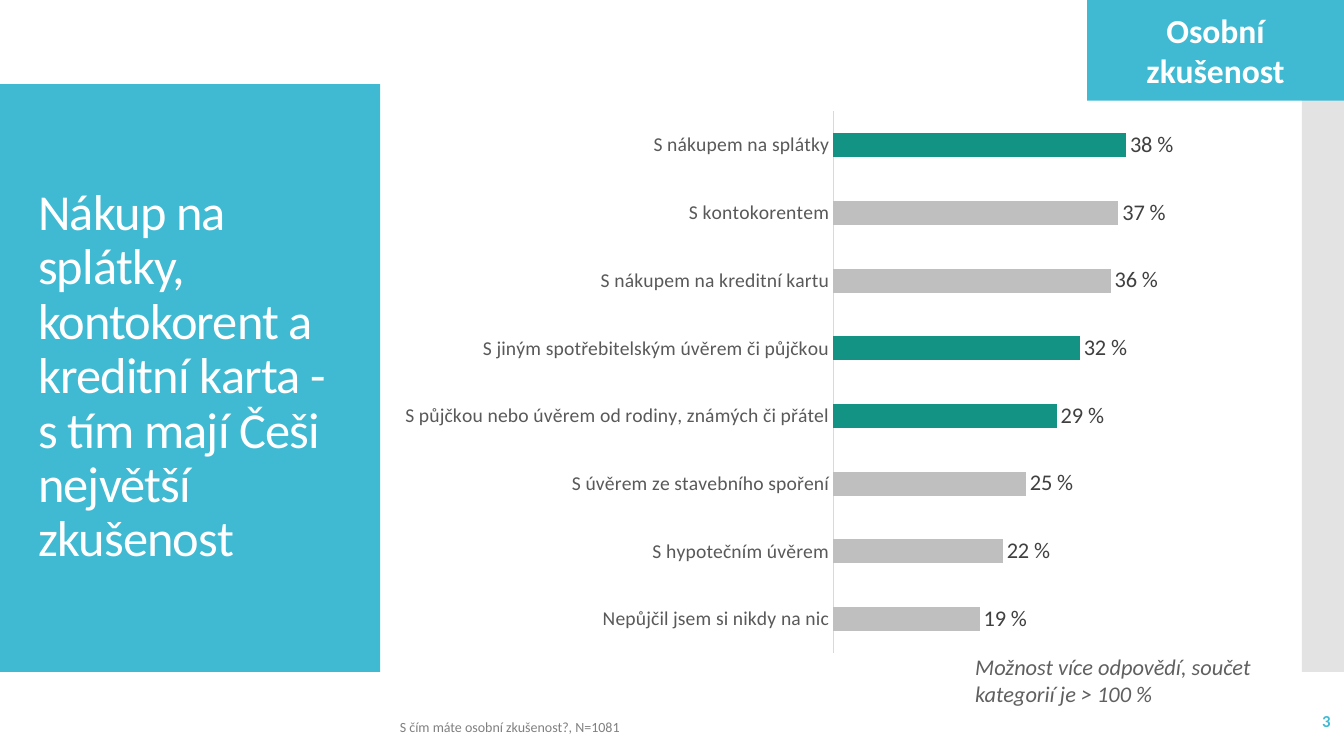
"""Build the slide on personal experience with loans as a bar chart."""
from dataclasses import dataclass

from lxml import etree
from pptx import Presentation
from pptx import util as u
from pptx.chart import data as chart_data
from pptx.dml import color
from pptx.enum import chart as chart_enum
from pptx.enum import shapes, text
from pptx.oxml import ns

FONT = "Calibri"
CYAN, TEAL, SILVER, WHITE = "40BAD2", "139383", "BFBFBF", "FFFFFF"


@dataclass(frozen=True)
class Frame:
    left: float
    top: float
    width: float
    height: float

    def lengths(self) -> list:
        return [u.Pt(v) for v in (self.left, self.top, self.width, self.height)]


@dataclass(frozen=True)
class Style:
    size: float
    hue: str
    bold: bool = False
    italic: bool = False
    align: text.PP_ALIGN = text.PP_ALIGN.LEFT
    anchor: text.MSO_ANCHOR = text.MSO_ANCHOR.TOP


@dataclass(frozen=True)
class Panel:
    frame: Frame
    fill: str
    opacity: int = 100


@dataclass(frozen=True)
class Label:
    frame: Frame
    words: str
    style: Style


@dataclass(frozen=True)
class Answer:
    name: str
    share: float
    hue: str = SILVER


PANELS = [
    Panel(Frame(0, 60, 271.5, 420), CYAN),
    Panel(Frame(930, 60, 30, 420), "C8C8C8", 50),
]
TITLE = Label(
    Frame(20, 88.5, 232, 362),
    "Nákup na splátky, kontokorent a kreditní karta - \vs tím mají Češi největší zkušenost",
    Style(36, WHITE, anchor=text.MSO_ANCHOR.MIDDLE),
)
LABELS = [
    Label(Frame(837.5, 500.5, 120, 29), "3",
          Style(12, CYAN, bold=True, align=text.PP_ALIGN.RIGHT, anchor=text.MSO_ANCHOR.MIDDLE)),
    Label(Frame(278.5, 510, 480, 19.5), "S čím máte osobní zkušenost?, N=1081", Style(10, "808080")),
    Label(Frame(689.5, 463, 242, 46), "Možnost více odpovědí, součet kategorií je > 100 %",
          Style(16, "606060", italic=True)),
]
TAG = Label(
    Frame(776.5, 0, 183.5, 72), "Osobní zkušenost",
    Style(24, WHITE, bold=True, align=text.PP_ALIGN.CENTER, anchor=text.MSO_ANCHOR.MIDDLE),
)
CHART_FRAME = Frame(278.5, 71.5, 576, 403)
ANSWERS = [
    Answer("Nepůjčil jsem si nikdy na nic", 0.19),
    Answer("S hypotečním úvěrem", 0.22),
    Answer("S úvěrem ze stavebního spoření", 0.25),
    Answer("S půjčkou nebo úvěrem od rodiny, známých či přátel", 0.29, TEAL),
    Answer("S jiným spotřebitelským úvěrem či půjčkou", 0.32, TEAL),
    Answer("S nákupem na kreditní kartu", 0.36),
    Answer("S kontokorentem", 0.37),
    Answer("S nákupem na splátky", 0.38, TEAL),
]


def rgb(value: str) -> color.RGBColor:
    return color.RGBColor.from_string(value)


def set_font(font, style: Style) -> None:
    font.name, font.size = FONT, u.Pt(style.size)
    font.bold, font.italic = style.bold, style.italic
    font.color.rgb = rgb(style.hue)


def write(box, label: Label) -> None:
    frame = box.text_frame
    frame.text = label.words
    frame.word_wrap = True
    frame.auto_size = text.MSO_AUTO_SIZE.NONE
    frame.vertical_anchor = label.style.anchor
    for para in frame.paragraphs:
        para.alignment = label.style.align
        for span in para.runs:
            set_font(span.font, label.style)


def add_panel(page, panel: Panel):
    box = page.shapes.add_shape(shapes.MSO_SHAPE.RECTANGLE, *panel.frame.lengths())
    box.shadow.inherit = False
    box.fill.solid()
    box.fill.fore_color.rgb = rgb(panel.fill)
    box.line.fill.background()
    if panel.opacity < 100:
        tint = box.fill._xPr.find(".//" + ns.qn("a:srgbClr"))
        etree.SubElement(tint, ns.qn("a:alpha"), val=str(panel.opacity * 1000))
    return box


def add_label(page, label: Label) -> None:
    write(page.shapes.add_textbox(*label.frame.lengths()), label)


def place_title(page, label: Label) -> None:
    title = page.shapes.title
    title.left, title.top, title.width, title.height = label.frame.lengths()
    write(title, label)
    para = title.text_frame.paragraphs[0]
    para.line_spacing = 0.9
    for span in para.runs:
        span.font._element.set("spc", "-60")


def fix_plot_area(chart, left: float, top: float, width: float, height: float) -> None:
    plot_area = chart._chartSpace.chart.plotArea
    for stale in plot_area.findall(ns.qn("c:layout")):
        plot_area.remove(stale)
    layout = etree.Element(ns.qn("c:layout"))
    manual = etree.SubElement(layout, ns.qn("c:manualLayout"))
    settings = {"layoutTarget": "inner", "xMode": "edge", "yMode": "edge",
                "x": left, "y": top, "w": width, "h": height}
    for name, value in settings.items():
        etree.SubElement(manual, ns.qn(f"c:{name}"), val=str(value))
    plot_area.insert(0, layout)


def add_answers_chart(page, frame: Frame, answers: list[Answer]) -> None:
    data = chart_data.CategoryChartData(number_format="0%")
    data.categories = [answer.name for answer in answers]
    data.add_series("Series 1", [answer.share for answer in answers])
    kind = chart_enum.XL_CHART_TYPE.BAR_CLUSTERED
    chart = page.shapes.add_chart(kind, *frame.lengths(), data).chart
    chart.has_legend = chart.has_title = False
    set_font(chart.font, Style(12, "000000"))
    fix_plot_area(chart, 0.55, 0.02, 0.43, 0.96)

    names = chart.category_axis
    names.major_tick_mark = chart_enum.XL_TICK_MARK.NONE
    names.format.line.color.rgb = rgb("D9D9D9")
    names.format.line.width = u.Pt(0.75)
    set_font(names.tick_labels.font, Style(14, "595959"))

    scale = chart.value_axis
    scale.visible = scale.has_major_gridlines = False
    scale.minimum_scale, scale.maximum_scale = 0, 0.45

    plot = chart.plots[0]
    plot.gap_width = 182
    plot.vary_by_categories = False
    series = plot.series[0]
    series.format.fill.solid()
    series.format.fill.fore_color.rgb = rgb(SILVER)
    for index, answer in enumerate(answers):
        if answer.hue != SILVER:
            fill = series.points[index].format.fill
            fill.solid()
            fill.fore_color.rgb = rgb(answer.hue)

    labels = series.data_labels
    labels.show_value = True
    labels.number_format, labels.number_format_is_linked = "0 %", False
    labels.position = chart_enum.XL_LABEL_POSITION.OUTSIDE_END
    set_font(labels.font, Style(16, "404040"))


def main() -> None:
    deck = Presentation()
    deck.slide_width, deck.slide_height = u.Pt(960), u.Pt(540)
    page = deck.slides.add_slide(deck.slide_layouts.get_by_name("Title Only"))
    for panel in PANELS:
        add_panel(page, panel)
    tree = page.shapes._spTree
    tree.append(page.shapes.title._element)
    place_title(page, TITLE)
    for label in LABELS:
        add_label(page, label)
    write(add_panel(page, Panel(TAG.frame, CYAN)), TAG)
    add_answers_chart(page, CHART_FRAME, ANSWERS)
    deck.save("out.pptx")


if __name__ == "__main__":
    main()
